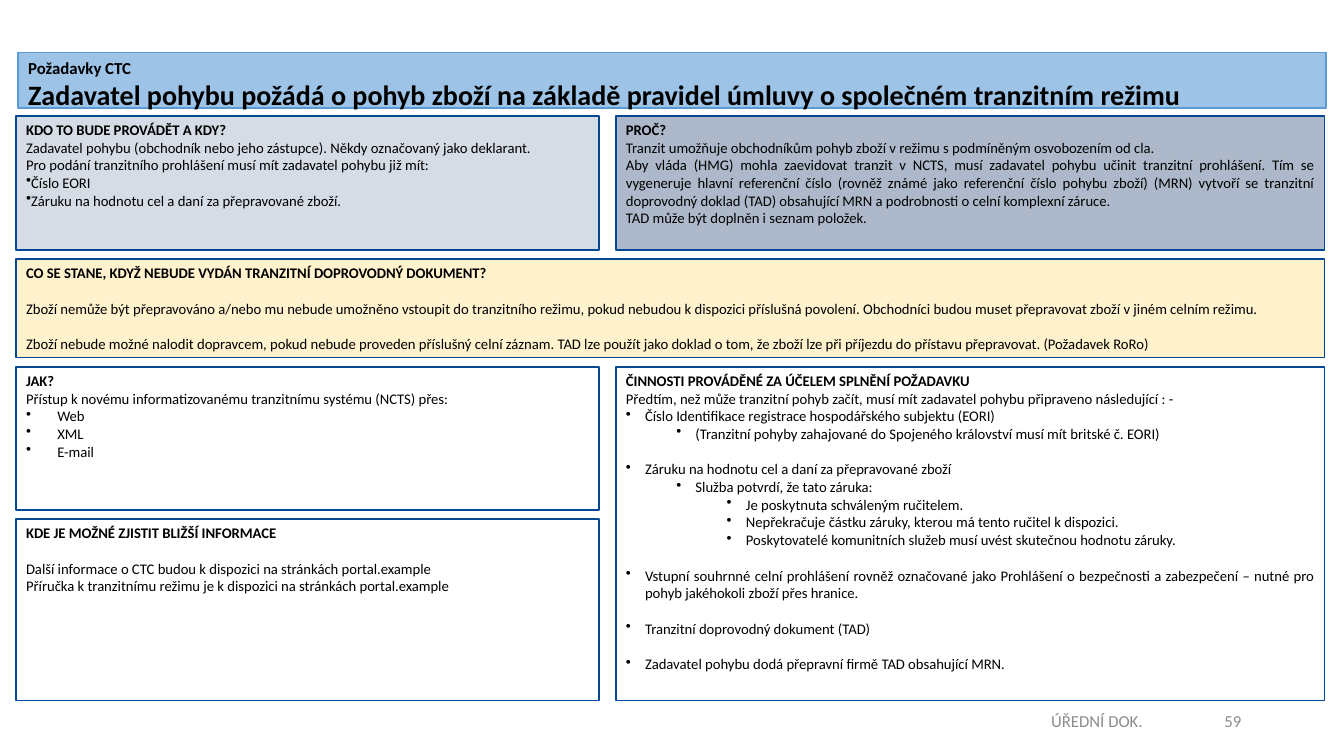
"""Build the slide on CTC requirements for starting a transit movement."""
import pptx
import pptx.util
import pptx.dml.color
import pptx.enum.shapes
import pptx.enum.text
import lxml.etree

Inches, Pt = pptx.util.Inches, pptx.util.Pt
RGBColor = pptx.dml.color.RGBColor
LEFT, CENTER, RIGHT, JUSTIFY = (getattr(pptx.enum.text.PP_ALIGN, name)
                                for name in ("LEFT", "CENTER", "RIGHT", "JUSTIFY"))
TOP, MIDDLE = pptx.enum.text.MSO_ANCHOR.TOP, pptx.enum.text.MSO_ANCHOR.MIDDLE

BLACK = RGBColor(0x00, 0x00, 0x00)
WHITE = RGBColor(0xFF, 0xFF, 0xFF)
GREY = RGBColor(0x8C, 0x8C, 0x8C)
NAVY = RGBColor(0x04, 0x48, 0x94)
BLUE = RGBColor(0x5B, 0x9B, 0xD5)
SKY = RGBColor(0x9D, 0xC3, 0xE6)
MIST = RGBColor(0xD6, 0xDC, 0xE5)
SLATE = RGBColor(0xAD, 0xB9, 0xCA)
CREAM = RGBColor(0xFF, 0xF2, 0xCC)

FONT = "Calibri"
BODY_SIZE = 10.5
BLANK_LINE = 12.8
HANG = 0.19
LEVEL_STEP = 0.5
GAP = 0.09

column_left = [0.16, 6.11]
column_width = [5.78, 7.03]
full_width = column_left[1] + column_width[1] - column_left[0]
row_height = [1.33, 0.98, 1.42, 1.8]
row_top = [1.15 + sum(row_height[:row]) + GAP * row for row in range(4)]


def style(para, size, color, bold, align):
    """Format every run of a paragraph alike."""
    para.alignment = align
    for span in para.runs:
        span.font.name = FONT
        span.font.size = Pt(size)
        span.font.bold = bold
        span.font.color.rgb = color


def add_bullet(para, margin, hang):
    """Give a paragraph a round bullet and a hanging indent."""
    settings = para._p.get_or_add_pPr()
    settings.set("marL", str(Inches(margin)))
    settings.set("indent", str(-Inches(hang)))
    bullet = lxml.etree.SubElement(settings, pptx.oxml.ns.qn("a:buChar"))
    bullet.set("char", "•")


deck = pptx.Presentation()
deck.slide_width, deck.slide_height = Inches(13.33), Inches(7.5)
page = deck.slides.add_slide(deck.slide_layouts[5])

banner = page.shapes.title
banner.left, banner.top = Inches(0.18), Inches(0.52)
banner.width, banner.height = Inches(12.97), Inches(0.55)
banner.fill.solid()
banner.fill.fore_color.rgb = SKY
banner.line.color.rgb = BLUE
banner.line.width = Pt(1)
banner.text_frame.text = ("Požadavky CTC\nZadavatel pohybu požádá o pohyb zboží na základě "
                          "pravidel úmluvy o společném tranzitním režimu")
banner.text_frame.word_wrap = True
banner.text_frame.auto_size = pptx.enum.text.MSO_AUTO_SIZE.NONE
banner.text_frame.vertical_anchor = TOP
for para, size in zip(banner.text_frame.paragraphs, (12, 20)):
    style(para, size, BLACK, True, LEFT)

panels = [
    (column_left[0], row_top[0], column_width[0], row_height[0], MIST, LEFT, 0, HANG,
     "KDO TO BUDE PROVÁDĚT A KDY?", [
         ("Zadavatel pohybu (obchodník nebo jeho zástupce). Někdy označovaný jako deklarant.", None, 0),
         ("Pro podání tranzitního prohlášení musí mít zadavatel pohybu již mít:", None, 0),
         ("Číslo EORI", 0, 0),
         ("Záruku na hodnotu cel a daní za přepravované zboží.", 0, 0)]),
    (column_left[1], row_top[0], column_width[1], row_height[0], SLATE, JUSTIFY, HANG, HANG,
     "PROČ?", [
         ("Tranzit umožňuje obchodníkům pohyb zboží v režimu s podmíněným osvobozením od cla.", None, 0),
         ("Aby vláda (HMG) mohla zaevidovat tranzit v NCTS, musí zadavatel pohybu učinit tranzitní "
          "prohlášení. Tím se vygeneruje hlavní referenční číslo (rovněž známé jako referenční číslo "
          "pohybu zboží) (MRN) vytvoří se tranzitní doprovodný doklad (TAD) obsahující MRN a "
          "podrobnosti o celní komplexní záruce.", None, 0),
         ("TAD může být doplněn i seznam položek.", None, 0)]),
    (column_left[0], row_top[1], full_width, row_height[1], CREAM, LEFT, HANG, HANG,
     "CO SE STANE, KDYŽ NEBUDE VYDÁN TRANZITNÍ DOPROVODNÝ DOKUMENT?", [
         ("Zboží nemůže být přepravováno a/nebo mu nebude umožněno vstoupit do tranzitního režimu, "
          "pokud nebudou k dispozici příslušná povolení. Obchodníci budou muset přepravovat zboží v "
          "jiném celním režimu.", None, 1),
         ("Zboží nebude možné nalodit dopravcem, pokud nebude proveden příslušný celní záznam. TAD lze "
          "použít jako doklad o tom, že zboží lze při příjezdu do přístavu přepravovat. "
          "(Požadavek RoRo)", None, 1)]),
    (column_left[0], row_top[2], column_width[0], row_height[2], WHITE, JUSTIFY, 0.31, 0.31,
     "JAK?", [
         ("Přístup k novému informatizovanému tranzitnímu systému (NCTS) přes:", None, 0),
         ("Web", 0, 0),
         ("XML", 0, 0),
         ("E-mail", 0, 0)]),
    (column_left[0], row_top[3], column_width[0], row_height[3], WHITE, LEFT, HANG, HANG,
     "KDE JE MOŽNÉ ZJISTIT BLIŽŠÍ INFORMACE", [
         ("Další informace o CTC budou k dispozici na stránkách portal.example", None, 1),
         ("Příručka k tranzitnímu režimu je k dispozici na stránkách portal.example", None, 0)]),
    (column_left[1], row_top[2], column_width[1], row_height[2] + GAP + row_height[3],
     WHITE, JUSTIFY, HANG, HANG,
     "ČINNOSTI PROVÁDĚNÉ ZA ÚČELEM SPLNĚNÍ POŽADAVKU", [
         ("Předtím, než může tranzitní pohyb začít, musí mít zadavatel pohybu připraveno "
          "následující : -", None, 0),
         ("Číslo Identifikace registrace hospodářského subjektu (EORI)", 0, 0),
         ("(Tranzitní pohyby zahajované do Spojeného království musí mít britské č. EORI)", 1, 0),
         ("Záruku na hodnotu cel a daní za přepravované zboží", 0, 1),
         ("Služba potvrdí, že tato záruka:", 1, 0),
         ("Je poskytnuta schváleným ručitelem.", 2, 0),
         ("Nepřekračuje částku záruky, kterou má tento ručitel k dispozici.", 2, 0),
         ("Poskytovatelé komunitních služeb musí uvést skutečnou hodnotu záruky.", 2, 0),
         ("Vstupní souhrnné celní prohlášení rovněž označované jako Prohlášení o bezpečnosti a "
          "zabezpečení – nutné pro pohyb jakéhokoli zboží přes hranice.", 0, 1),
         ("Tranzitní doprovodný dokument (TAD)", 0, 1),
         ("Zadavatel pohybu dodá přepravní firmě TAD obsahující MRN.", 0, 1)]),
]

for left, top, width, height, fill, align, margin, hang, heading, lines in panels:
    box = page.shapes.add_shape(pptx.enum.shapes.MSO_SHAPE.RECTANGLE,
                                Inches(left), Inches(top), Inches(width), Inches(height))
    box.shadow.inherit = False
    box.fill.solid()
    box.fill.fore_color.rgb = fill
    box.line.color.rgb = NAVY
    box.line.width = Pt(1)
    frame = box.text_frame
    frame.word_wrap = True
    frame.vertical_anchor = TOP
    frame.text = heading
    style(frame.paragraphs[0], BODY_SIZE, BLACK, True, LEFT)
    for text, level, blanks in lines:
        para = frame.add_paragraph()
        para.text = text
        para.space_before = Pt(BLANK_LINE * blanks)
        style(para, BODY_SIZE, BLACK, False, align)
        if level is not None:
            para.level = level
            add_bullet(para, margin + LEVEL_STEP * level, hang)

for text, left, width, align in [("ÚŘEDNÍ DOK.", 8.63, 4.5, CENTER), ("59", 11.95, 0.46, RIGHT)]:
    box = page.shapes.add_textbox(Inches(left), Inches(6.95), Inches(width), Inches(0.4))
    box.text_frame.word_wrap = True
    box.text_frame.vertical_anchor = MIDDLE
    box.text_frame.text = text
    style(box.text_frame.paragraphs[0], 12, GREY, False, align)

deck.save("out.pptx")
